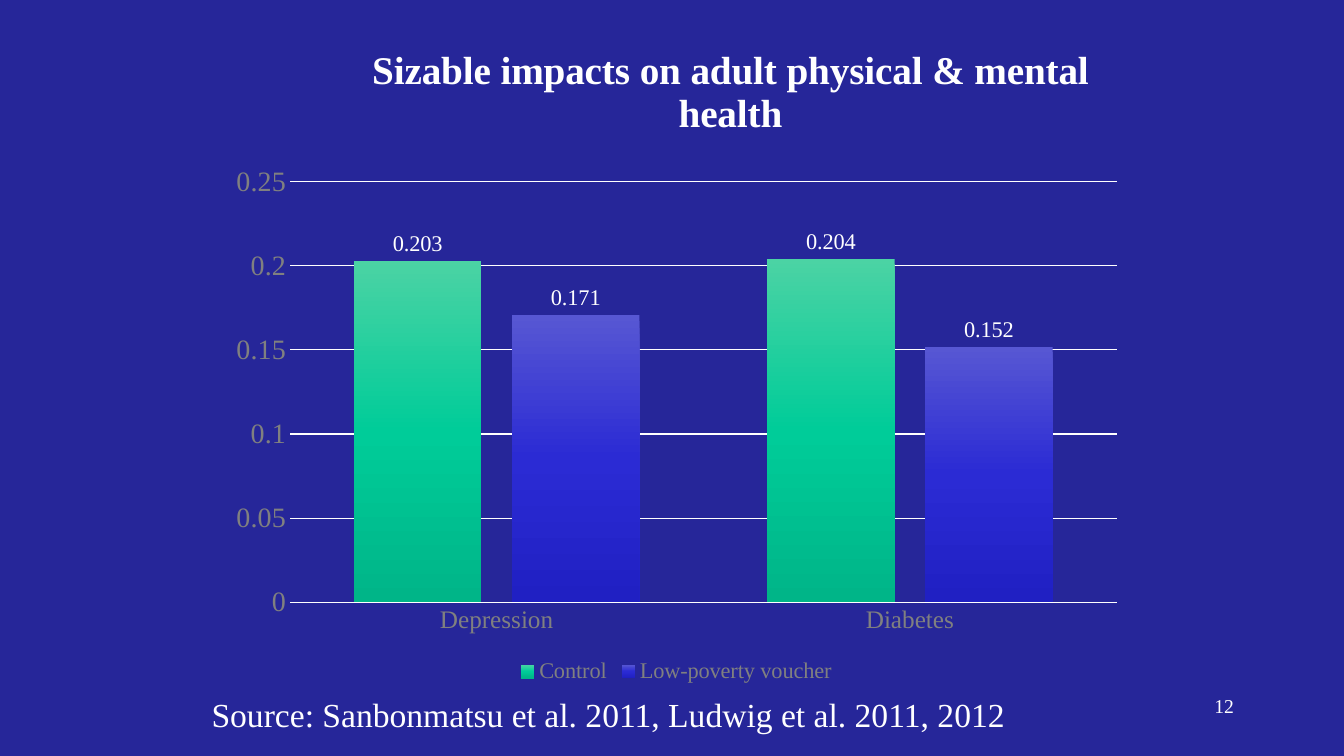
from copy import deepcopy
from dataclasses import dataclass

from lxml.etree import SubElement
from pptx import Presentation
from pptx.chart.chart import Chart
from pptx.chart.data import CategoryChartData
from pptx.dml.color import RGBColor
from pptx.enum.chart import XL_CHART_TYPE, XL_LABEL_POSITION, XL_LEGEND_POSITION, XL_TICK_MARK
from pptx.enum.text import PP_ALIGN
from pptx.oxml.ns import qn
from pptx.slide import Slide
from pptx.text.text import Font
from pptx.util import Pt

NAVY = RGBColor(0x26, 0x26, 0x99)
WHITE = RGBColor(0xFF, 0xFF, 0xFF)
GRAY = RGBColor(0x80, 0x80, 0x80)
FACE = "Times New Roman"


@dataclass
class Group:
    name: str
    rates: tuple[float, ...]
    shades: tuple[RGBColor, ...]


@dataclass
class Note:
    text: str
    left: float
    width: float
    size: float
    align: PP_ALIGN
    wrap: bool


CATS = ("Depression", "Diabetes")
GROUPS = (
    Group("Control", (0.203, 0.204),
          (RGBColor(0x4B, 0xD3, 0xA4), RGBColor(0x00, 0xCC, 0x99), RGBColor(0x00, 0xB5, 0x88))),
    Group("Low-poverty voucher", (0.171, 0.152),
          (RGBColor(0x57, 0x57, 0xD3), RGBColor(0x2B, 0x2B, 0xD4), RGBColor(0x20, 0x20, 0xC3))),
)
NOTES = (
    Note("12", 688.3, 200.2, 14, PP_ALIGN.RIGHT, True),
    Note("Source: Sanbonmatsu et al. 2011, Ludwig et al. 2011, 2012",
         144, 586, 24, PP_ALIGN.LEFT, False),
)


def style(font: Font, size: float, color: RGBColor, bold: bool = False) -> None:
    font.name = FACE
    font.size = Pt(size)
    font.bold = bold
    font.color.rgb = color


def place(parent, inner: bool = False, **spots: float) -> None:
    """Set a manual layout, in fractions of the chart, on a title or plot."""
    old = parent.find(qn("c:layout"))
    if old is not None:
        parent.remove(old)
    box = SubElement(SubElement(parent, qn("c:layout")), qn("c:manualLayout"))
    if inner:
        SubElement(box, qn("c:layoutTarget")).set("val", "inner")
    for side in ("x", "y"):
        SubElement(box, qn(f"c:{side}Mode")).set("val", "edge")
    for side, val in spots.items():
        SubElement(box, qn(f"c:{side}")).set("val", str(val))
    parent.insert(0 if inner else 1, box.getparent())


def add_title(chart: Chart, text: str) -> None:
    chart.has_title = True
    run = chart.chart_title.text_frame.paragraphs[0].add_run()
    run.text = text
    style(run.font, 28, WHITE, True)
    place(next(chart.element.iter(qn("c:title"))), x=0.16, y=0.02)


def style_axes(chart: Chart) -> None:
    cat, val = chart.category_axis, chart.value_axis
    for axis, size in ((cat, 18), (val, 20)):
        axis.major_tick_mark = axis.minor_tick_mark = XL_TICK_MARK.NONE
        style(axis.tick_labels.font, size, GRAY)
    cat.format.line.color.rgb = WHITE
    cat.format.line.width = Pt(1)
    val.format.line.fill.background()
    val.minimum_scale, val.maximum_scale, val.major_unit = 0, 0.25, 0.05
    val.has_major_gridlines = True
    grid = val.major_gridlines.format.line
    grid.color.rgb = WHITE
    grid.width = Pt(0.75)


def style_bars(chart: Chart) -> None:
    plot = chart.plots[0]
    plot.gap_width, plot.overlap = 100, -24
    plot.vary_by_categories = False
    bars = list(plot.series)
    for bar in bars:
        bar.format.fill.gradient()
        bar.format.fill.gradient_angle = 270
        tags = bar.data_labels
        tags.show_value = True
        tags.position = XL_LABEL_POSITION.OUTSIDE_END
        style(tags.font, 16, WHITE)
    for stops in chart.element.iter(qn("a:gsLst")):
        stops.insert(1, deepcopy(stops[0]))
    for bar, group in zip(bars, GROUPS):
        for i, stop in enumerate(bar.format.fill.gradient_stops):
            stop.position = i / 2
            stop.color.rgb = group.shades[i]


def add_rates(slide: Slide) -> None:
    data = CategoryChartData()
    data.categories = CATS
    for group in GROUPS:
        data.add_series(group.name, group.rates)
    chart = slide.shapes.add_chart(XL_CHART_TYPE.COLUMN_CLUSTERED, Pt(156.2), Pt(18),
                                   Pt(653.8), Pt(473.8), data).chart
    style(chart.font, 10, WHITE)
    add_title(chart, "Sizable impacts on adult physical & mental health")
    style_axes(chart)
    style_bars(chart)
    place(next(chart.element.iter(qn("c:plotArea"))), True, x=0.078, y=0.236, w=0.903, h=0.634)
    chart.has_legend = True
    chart.legend.position = XL_LEGEND_POSITION.BOTTOM
    chart.legend.include_in_layout = False
    style(chart.legend.font, 16, GRAY)


def add_note(slide: Slide, note: Note) -> None:
    box = slide.shapes.add_textbox(Pt(note.left), Pt(491.8), Pt(note.width), Pt(36))
    box.text_frame.word_wrap = note.wrap
    para = box.text_frame.paragraphs[0]
    para.alignment = note.align
    run = para.add_run()
    run.text = note.text
    style(run.font, note.size, WHITE)


def main() -> None:
    deck = Presentation()
    deck.slide_width, deck.slide_height = Pt(960), Pt(540)
    slide = deck.slides.add_slide(deck.slide_layouts[6])
    slide.background.fill.solid()
    slide.background.fill.fore_color.rgb = NAVY
    add_rates(slide)
    for note in NOTES:
        add_note(slide, note)
    deck.save("out.pptx")


if __name__ == "__main__":
    main()
